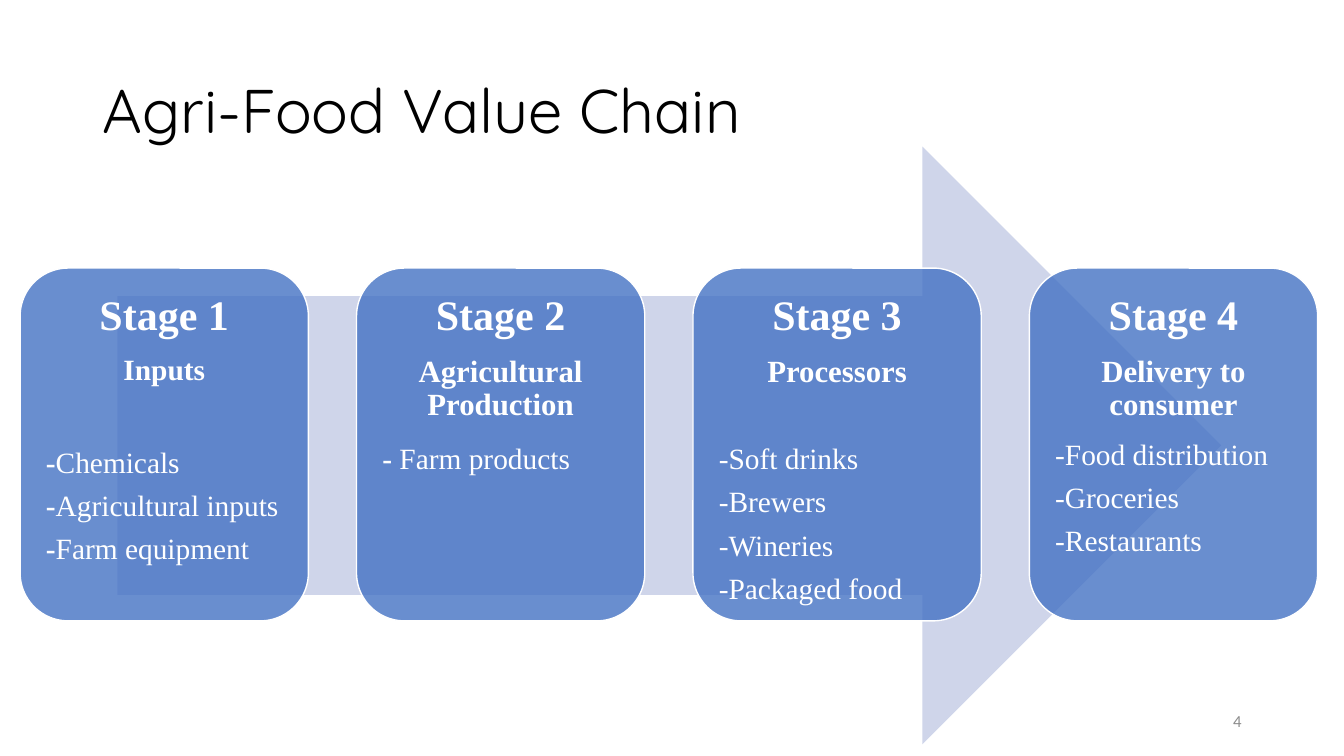
from lxml import etree
from pptx import Presentation
from pptx import util as u
from pptx.dml.color import RGBColor
from pptx.enum import shapes, text
from pptx.oxml.ns import qn

TITLE = "Agri-Food Value Chain"
PAGE = "4"
SERIF = "Times New Roman"
STAGES = [
    {"name": "Stage 1", "role": "Inputs", "size": 21, "gap": 35.5, "bold_dash": True,
     "items": ["Chemicals", "Agricultural inputs", "Farm equipment"]},
    {"name": "Stage 2", "role": "Agricultural Production", "size": 22, "gap": 7.1,
     "bold_dash": True, "items": [" Farm products"]},
    {"name": "Stage 3", "role": "Processors", "size": 22, "gap": 31.3, "bold_dash": False,
     "items": ["Soft drinks", "Brewers", "Wineries", "Packaged food"]},
    {"name": "Stage 4", "role": "Delivery to consumer", "size": 22, "gap": 4.3,
     "bold_dash": False, "items": ["Food distribution", "Groceries", "Restaurants"]},
]
CARD_LEFT, CARD_TOP, CARD_W, CARD_H, CARD_PITCH = 14.4, 191.5, 205.9, 252, 240.3
CARD_INSET = 8.4
ITEM_SIZE = 21
AFTER = 0.385


def color(target, value):
    target.rgb = RGBColor.from_string(value)


def style(p, name, size, value, bold=False, align=text.PP_ALIGN.LEFT, spacing=1.0):
    p.font.name, p.font.size, p.font.bold = name, u.Pt(size), bold
    color(p.font.color, value)
    p.alignment, p.line_spacing = align, spacing


def add_shape(s, kind, box, fill):
    sp = s.shapes.add_shape(kind, *map(u.Pt, box))
    sp.shadow.inherit = False
    sp.fill.solid()
    color(sp.fill.fore_color, fill)
    return sp


def add_label(s, box, words, *font, **layout):
    sp = s.shapes.add_textbox(*map(u.Pt, box))
    tf = sp.text_frame
    tf.word_wrap = True
    tf.vertical_anchor = text.MSO_ANCHOR.MIDDLE
    tf.text = words
    style(tf.paragraphs[0], *font, **layout)


def add_line(tf, first, size, bold, align):
    p = tf.paragraphs[0] if first else tf.add_paragraph()
    style(p, SERIF, size, "FFFFFF", bold, align, 0.9)
    p.space_after = u.Pt(round(size * AFTER, 1))
    return p


def add_card(s, i, stage):
    box = CARD_LEFT + i * CARD_PITCH, CARD_TOP, CARD_W, CARD_H
    sp = add_shape(s, shapes.MSO_SHAPE.ROUNDED_RECTANGLE, box, "4472C4")
    fill = sp._element.spPr.find(qn("a:solidFill"))
    etree.SubElement(fill[0], qn("a:alpha"), val="80000")
    color(sp.line.color, "FFFFFF")
    sp.line.width = u.Pt(1)
    tf = sp.text_frame
    tf.word_wrap = True
    tf.vertical_anchor = text.MSO_ANCHOR.TOP
    tf.margin_left = tf.margin_right = tf.margin_top = tf.margin_bottom = u.Pt(CARD_INSET)
    center, left = text.PP_ALIGN.CENTER, text.PP_ALIGN.LEFT
    add_line(tf, True, 30, True, center).text = stage["name"]
    add_line(tf, False, stage["size"], True, center).text = stage["role"]
    for n, item in enumerate(stage["items"]):
        p = add_line(tf, False, ITEM_SIZE, False, left)
        p.space_before = u.Pt(0 if n else stage["gap"])
        if stage["bold_dash"]:
            r = p.add_run()
            r.text, r.font.bold = "-", True
            p.add_run().text = item
        else:
            p.text = "-" + item


def main():
    prs = Presentation()
    prs.slide_width, prs.slide_height = u.Pt(960), u.Pt(540)
    s = prs.slides.add_slide(prs.slide_layouts[6])
    add_label(s, (66, 28.8, 828, 104.4), TITLE, "Quicksand", 44, "000000", spacing=0.9)
    arrow = add_shape(s, shapes.MSO_SHAPE.RIGHT_ARROW, (83.9, 104.7, 788.4, 427), "CFD5EA")
    arrow.line.fill.background()
    for i, stage in enumerate(STAGES):
        add_card(s, i, stage)
    add_label(s, (678, 500.5, 216, 28.8), PAGE, "Calibri", 12, "8C8C8C",
              align=text.PP_ALIGN.RIGHT)
    prs.save("out.pptx")


if __name__ == "__main__":
    main()
